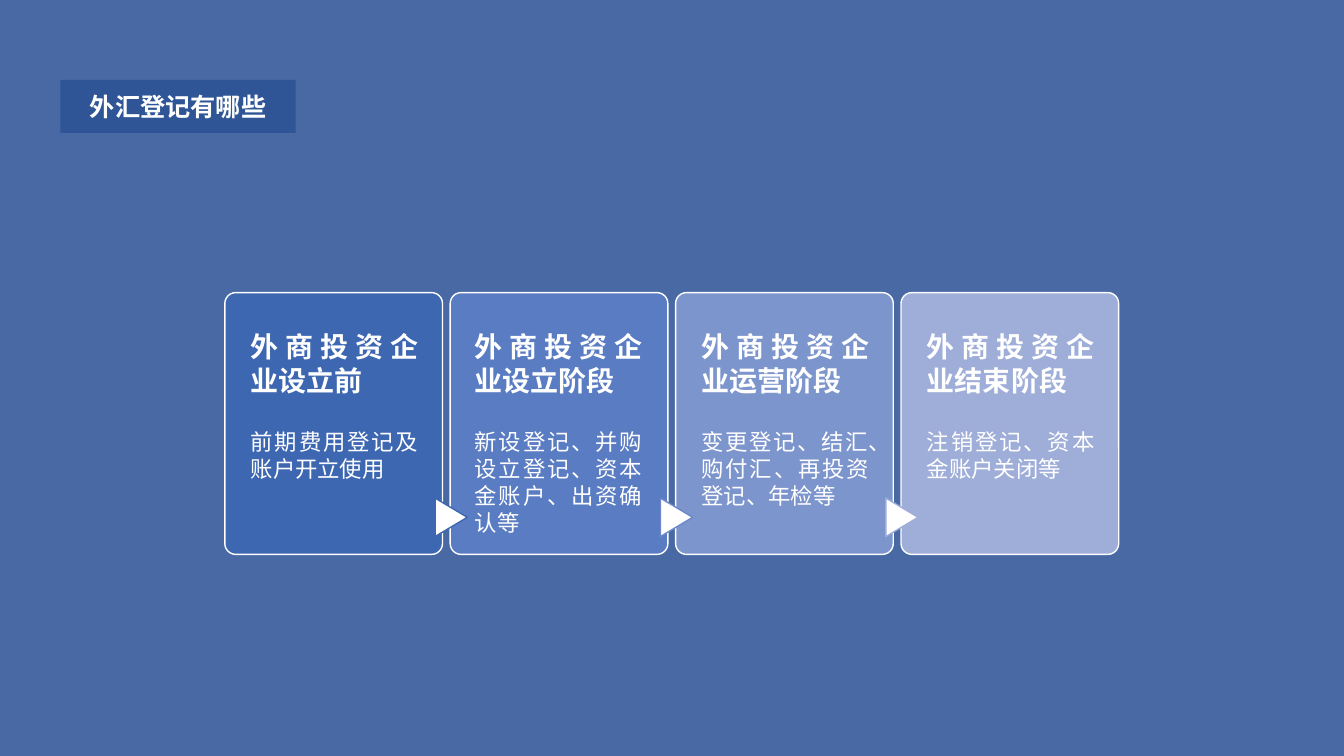
"""Build a slide showing the four stages of foreign exchange registration."""
import pptx
import pptx.dml.color
import pptx.enum.shapes
import pptx.enum.text
import pptx.oxml
import pptx.oxml.ns
import pptx.util
from lxml import etree

Pt = pptx.util.Pt
SHAPES = pptx.enum.shapes.MSO_SHAPE
ALIGN = pptx.enum.text.PP_ALIGN
FIT = pptx.enum.text.MSO_AUTO_SIZE
FONT = "Noto Sans CJK SC"
COLORS = {
    "navy": "2F5597", "white": "FFFFFF",
    "before": "3E67B2", "setup": "5A7CC3", "running": "7D95CD", "closing": "9FAED8",
    "running_edge": "6C88C8",
}


def paint(shape, fill, line=None):
    shape.shadow.inherit = False
    shape.fill.solid()
    shape.fill.fore_color.rgb = pptx.dml.color.RGBColor.from_string(COLORS[fill])
    if line:
        shape.line.color.rgb = pptx.dml.color.RGBColor.from_string(COLORS[line])
        shape.line.width = Pt(1)
    else:
        shape.line.fill.background()


def write(frame, text, size, bold, align, fit):
    frame.word_wrap = True
    frame.auto_size = fit
    frame.text = text
    paragraph = frame.paragraphs[0]
    paragraph.alignment = align
    font = paragraph.runs[0].font
    font.size, font.bold, font.name = Pt(size), bold, FONT
    font.color.rgb = pptx.dml.color.RGBColor.from_string(COLORS["white"])
    latin = paragraph.runs[0].font.fill and paragraph.runs[0]._r.rPr.find(pptx.oxml.ns.qn("a:latin"))
    east_asian = etree.Element(pptx.oxml.ns.qn("a:ea"), typeface=FONT)
    latin.addnext(east_asian)


deck = pptx.Presentation()
deck.slide_width, deck.slide_height = Pt(960), Pt(540)
slide = deck.slides.add_slide(deck.slide_layouts[5])

backdrop = slide.shapes.add_shape(SHAPES.RECTANGLE, Pt(-1), Pt(0), Pt(962), Pt(540))
paint(backdrop, "navy")
backdrop_color = backdrop.element.spPr.find(pptx.oxml.ns.qn("a:solidFill"))[0]
etree.SubElement(backdrop_color, pptx.oxml.ns.qn("a:alpha"), val="88000")

stages = [
    ("外商投资企业设立前", "前期费用登记及账户开立使用", "before", None, 172, 46),
    ("外商投资企业设立阶段", "新设登记、并购设立登记、资本金账户、出资确认等", "setup", "before", 332, 85),
    ("外商投资企业运营阶段", "变更登记、结汇、购付汇、再投资登记、年检等", "running", "running_edge", 494, 65.5),
    ("外商投资企业结束阶段", "注销登记、资本金账户关闭等", "closing", "closing", 655, 46),
]
process = slide.shapes.add_group_shape().shapes
for index, (heading, duties, color, arrow_edge, text_left, duties_height) in enumerate(stages):
    card_left = 160.6 + 161 * index
    card = process.add_shape(SHAPES.ROUNDED_RECTANGLE, Pt(card_left), Pt(209), Pt(155.5), Pt(187))
    card.adjustments[0] = 0.05
    paint(card, color, "white")
    if arrow_edge:
        arrow = process.add_shape(
            SHAPES.FLOWCHART_EXTRACT, Pt(card_left - 13), Pt(358), Pt(27.4), Pt(23))
        arrow.rotation = 90
        paint(arrow, "white", arrow_edge)
    for text, top, height, size, bold in [
        (heading, 232, 55.4, 20, True),
        (duties, 302.6, duties_height, 16, False),
    ]:
        label = process.add_textbox(Pt(text_left), Pt(top), Pt(134), Pt(height))
        write(label.text_frame, text, size, bold, ALIGN.JUSTIFY, FIT.SHAPE_TO_FIT_TEXT)

title = slide.shapes.title
title.left, title.top, title.width, title.height = Pt(43.2), Pt(57), Pt(168), Pt(38)
title.element.spPr.append(pptx.oxml.parse_xml(
    '<a:prstGeom xmlns:a="http://schemas.openxmlformats.org/drawingml/2006/main"'
    ' prst="roundRect"><a:avLst/></a:prstGeom>'))
title.fill.solid()
title.fill.fore_color.rgb = pptx.dml.color.RGBColor.from_string(COLORS["navy"])
write(title.text_frame, "外汇登记有哪些", 18, True, ALIGN.CENTER, FIT.NONE)
title.text_frame.vertical_anchor = pptx.enum.text.MSO_ANCHOR.MIDDLE
slide.shapes.element.append(title.element)

deck.save("out.pptx")
